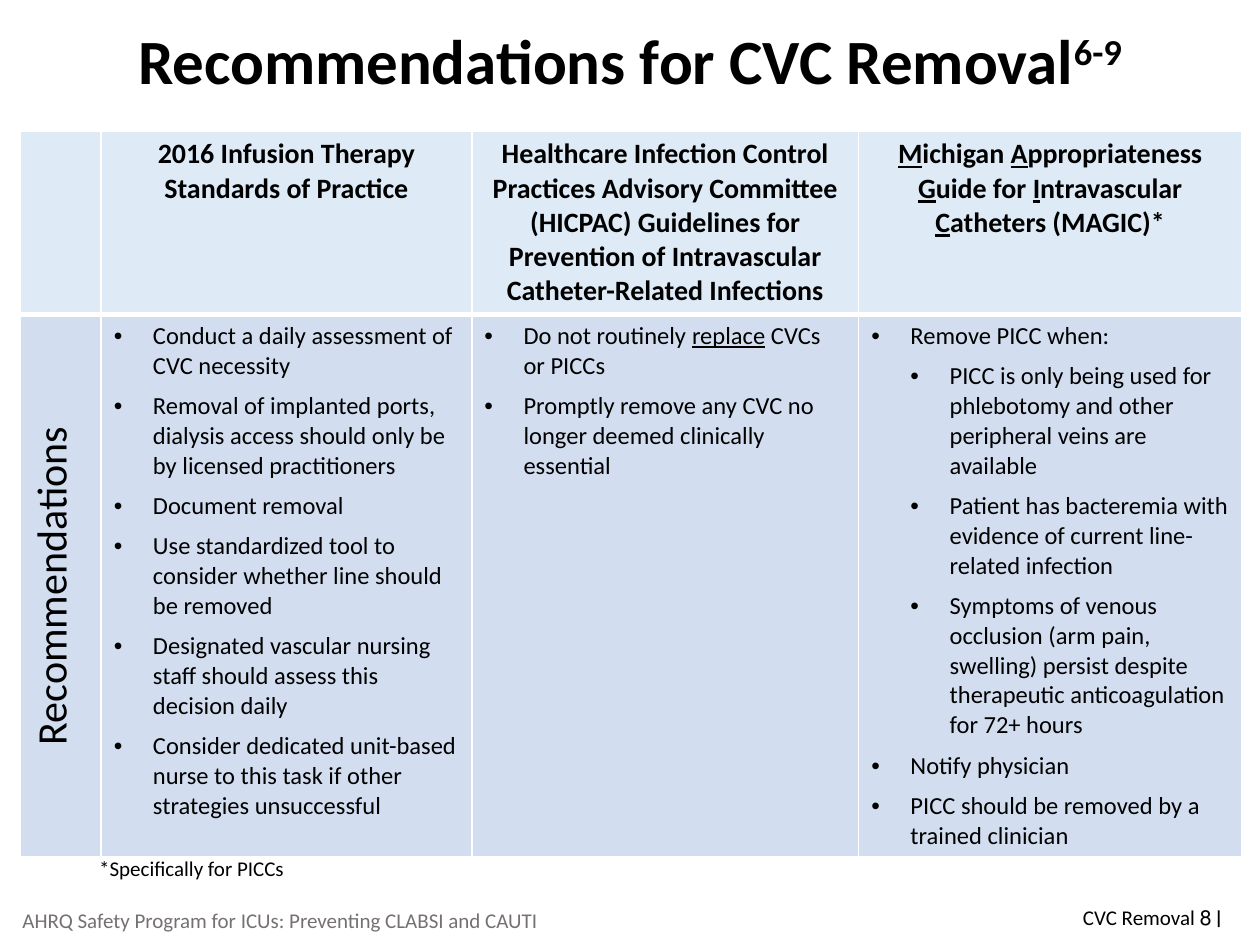
import pptx
import pptx.dml.color
import pptx.enum.text
import pptx.util
from lxml import etree
from pptx.oxml.ns import qn

Cm = pptx.util.Cm
Pt = pptx.util.Pt
ALIGN = pptx.enum.text.PP_ALIGN
ANCHOR = pptx.enum.text.MSO_ANCHOR
AUTO_SIZE = pptx.enum.text.MSO_AUTO_SIZE

# Underscores enclose underlined text.
HEADINGS = [
    "",
    "2016 Infusion Therapy Standards of Practice",
    "Healthcare Infection Control Practices Advisory Committee (HICPAC) "
    "Guidelines for Prevention of Intravascular Catheter-Related Infections",
    "_M_ichigan _A_ppropriateness _G_uide for _I_ntravascular _C_atheters (MAGIC)*",
]

# Each recommendation is (indent level, text).
RECOMMENDATIONS = [
    [
        (0, "Conduct a daily assessment of CVC necessity"),
        (0, "Removal of implanted ports, dialysis access should only be by licensed practitioners"),
        (0, "Document removal"),
        (0, "Use standardized tool to consider whether line should be removed"),
        (0, "Designated vascular nursing staff should assess this decision daily"),
        (0, "Consider dedicated unit-based nurse to this task if other strategies unsuccessful"),
    ],
    [
        (0, "Do not routinely _replace_ CVCs or PICCs"),
        (0, "Promptly remove any CVC no longer deemed clinically essential"),
    ],
    [
        (0, "Remove PICC when:"),
        (1, "PICC is only being used for phlebotomy and other peripheral veins are available"),
        (1, "Patient has bacteremia with evidence of current line-related infection"),
        (1, "Symptoms of venous occlusion (arm pain, swelling) persist despite "
            "therapeutic anticoagulation for 72+ hours"),
        (0, "Notify physician"),
        (0, "PICC should be removed by a trained clinician"),
    ],
]


def rgb(value):
    return pptx.dml.color.RGBColor.from_string(value)


class SlideBuilder:
    font_name = "Calibri"
    black, gray, white = "000000", "767171", "FFFFFF"
    header_fill, body_fill = "DEEBF7", "D2DEEF"
    bullet_indent = Cm(0.79)

    def __init__(self, slide):
        self.slide = slide

    def style(self, paragraph, size, color=black, bold=False, align=ALIGN.LEFT):
        paragraph.alignment = align
        font = paragraph.font
        font.name, font.size, font.bold = self.font_name, Pt(size), bold
        font.color.rgb = rgb(color)

    def add_runs(self, paragraph, marked_text):
        """Add runs, underlining the parts enclosed in underscores."""
        for index, part in enumerate(marked_text.split("_")):
            if part:
                run = paragraph.add_run()
                run.text = part
                if index % 2:
                    run.font.underline = True

    def title(self, text, references, left, top, width, height):
        title = self.slide.shapes.title
        title.left, title.top, title.width, title.height = map(Cm, (left, top, width, height))
        frame = title.text_frame
        frame.auto_size = AUTO_SIZE.NONE
        frame.vertical_anchor = ANCHOR.MIDDLE
        paragraph = frame.paragraphs[0]
        self.add_runs(paragraph, text)
        superscript = paragraph.add_run()
        superscript.text = references
        superscript._r.get_or_add_rPr().set("baseline", "30000")
        self.style(paragraph, 36, bold=True, align=ALIGN.CENTER)
        paragraph.line_spacing = 1.05

    def label(self, text, left, top, width, height, color=black,
              align=ALIGN.LEFT, anchor=ANCHOR.MIDDLE, wrap=True):
        box = self.slide.shapes.add_textbox(*map(Cm, (left, top, width, height)))
        frame = box.text_frame
        frame.word_wrap = wrap
        frame.auto_size = AUTO_SIZE.NONE if wrap else AUTO_SIZE.SHAPE_TO_FIT_TEXT
        frame.vertical_anchor = anchor
        self.add_runs(frame.paragraphs[0], text)
        self.style(frame.paragraphs[0], 12, color, align=align)

    def bullet(self, paragraph, level, text):
        self.add_runs(paragraph, text)
        paragraph.level = level
        properties = paragraph._p.get_or_add_pPr()
        properties.set("marL", str(self.bullet_indent * (level + 1)))
        properties.set("indent", str(-self.bullet_indent))
        etree.SubElement(properties, qn("a:buFont")).set("typeface", "Arial")
        etree.SubElement(properties, qn("a:buChar")).set("char", "•")
        self.style(paragraph, 14)
        paragraph.space_after = Pt(6)

    def paint(self, cell, fill, top=1, bottom=1):
        """Set the cell's borders, then its fill, in schema order."""
        properties = cell._tc.get_or_add_tcPr()
        for side, width in (("L", 1), ("R", 1), ("T", top), ("B", bottom)):
            line = etree.SubElement(properties, qn(f"a:ln{side}"), w=str(Pt(width)))
            solid = etree.SubElement(line, qn("a:solidFill"))
            etree.SubElement(solid, qn("a:srgbClr"), val=self.white)
        cell.fill.solid()
        cell.fill.fore_color.rgb = rgb(fill)

    def table(self, left, top, widths, heights):
        table = self.slide.shapes.add_table(
            len(heights), len(widths), Cm(left), Cm(top),
            Cm(sum(widths)), Cm(sum(heights))).table
        for column, width in zip(table.columns, widths):
            column.width = Cm(width)
        for row, height in zip(table.rows, heights):
            row.height = Cm(height)

        for index, heading in enumerate(HEADINGS):
            header, body = table.cell(0, index), table.cell(1, index)
            self.paint(header, self.header_fill, bottom=3)
            self.paint(body, self.body_fill, top=3)
            paragraph = header.text_frame.paragraphs[0]
            self.add_runs(paragraph, heading)
            self.style(paragraph, 16, bold=True, align=ALIGN.CENTER)

        row_name = table.cell(1, 0)
        row_name.vertical_anchor = ANCHOR.MIDDLE
        row_name._tc.get_or_add_tcPr().set("vert", "vert270")
        paragraph = row_name.text_frame.paragraphs[0]
        self.add_runs(paragraph, "Recommendations")
        self.style(paragraph, 24, align=ALIGN.CENTER)

        for column, items in enumerate(RECOMMENDATIONS, start=1):
            frame = table.cell(1, column).text_frame
            for index, (level, text) in enumerate(items):
                paragraph = frame.add_paragraph() if index else frame.paragraphs[0]
                self.bullet(paragraph, level, text)


def main():
    deck = pptx.Presentation()
    deck.slide_width, deck.slide_height = Cm(25.4), Cm(19.05)
    builder = SlideBuilder(deck.slides.add_slide(deck.slide_layouts[5]))
    builder.title("Recommendations for CVC Removal", "6-9", 1.75, 0.03, 21.9, 2.26)
    builder.table(0.41, 2.64, widths=(1.63, 7.47, 7.8, 7.72), heights=(3.68, 10.41))
    builder.label("CVC Removal ׀ 8", 19.15, 17.98, 5.72, 1.02, align=ALIGN.RIGHT)
    builder.label("*Specifically for PICCs", 1.75, 17.12, 4.29, 0.76,
                  anchor=ANCHOR.TOP, wrap=False)
    builder.label("AHRQ Safety Program for ICUs: Preventing CLABSI and CAUTI",
                  0, 18.03, 11.3, 1.02, color=builder.gray, align=ALIGN.CENTER)
    deck.save("out.pptx")


if __name__ == "__main__":
    main()
